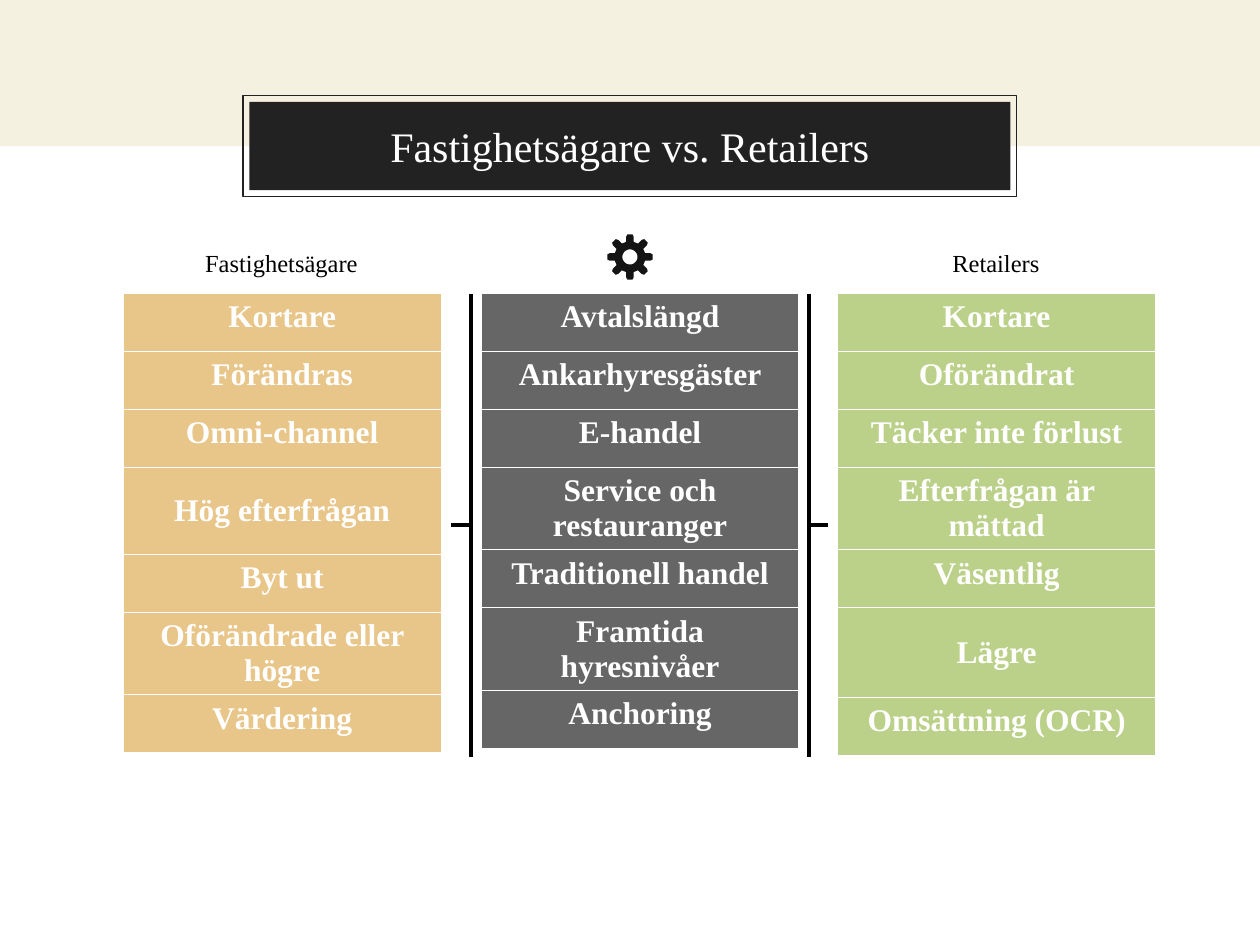
import math

import pptx
import pptx.dml.color
import pptx.enum.shapes
import pptx.enum.text
import pptx.oxml
import pptx.oxml.ns
import pptx.util
from pptx.util import Inches

RGBColor = pptx.dml.color.RGBColor
PP_ALIGN = pptx.enum.text.PP_ALIGN
ANCHOR = pptx.enum.text.MSO_ANCHOR

CREAM = RGBColor(0xF5, 0xF1, 0xE0)
CHARCOAL = RGBColor(0x22, 0x22, 0x22)
GEAR_BLACK = RGBColor(0x14, 0x14, 0x14)
BLACK = RGBColor(0, 0, 0)
WHITE = RGBColor(0xFF, 0xFF, 0xFF)
GREY = RGBColor(0x66, 0x66, 0x66)
SAND = RGBColor(0xE8, 0xC5, 0x88)
GREEN = RGBColor(0xBB, 0xD1, 0x89)

FONT = "Times New Roman"
TOP = 2.33
COLUMN_WIDTH = 2.52
ROW_HEIGHT = 0.46


class SlideBuilder:
    def __init__(self, slide):
        self.slide = slide
        self.shapes = slide.shapes

    def add_text(self, paragraph, text, size, color, bold=False):
        run = paragraph.add_run()
        run.text = text
        run.font.name = FONT
        run.font.size = pptx.util.Pt(size)
        run.font.bold = bold
        run.font.color.rgb = color

    def box(self, left, top, width, height, fill=None, line=None):
        box = self.shapes.add_shape(
            pptx.enum.shapes.MSO_SHAPE.RECTANGLE,
            Inches(left), Inches(top), Inches(width), Inches(height))
        box.shadow.inherit = False
        if fill is None:
            box.fill.background()
        else:
            box.fill.solid()
            box.fill.fore_color.rgb = fill
        if line is None:
            box.line.fill.background()
        else:
            box.line.color.rgb = line
            box.line.width = pptx.util.Pt(0.75)
        return box

    def title(self, text):
        self.box(1.93, 0.76, 6.14, 0.8, line=CHARCOAL)
        frame = self.box(1.98, 0.81, 6.04, 0.7, fill=CHARCOAL).text_frame
        frame.word_wrap = True
        frame.vertical_anchor = ANCHOR.MIDDLE
        frame.margin_left = frame.margin_right = Inches(0.1)
        frame.margin_top = frame.margin_bottom = Inches(0.1)
        frame.paragraphs[0].alignment = PP_ALIGN.CENTER
        self.add_text(frame.paragraphs[0], text, 24, WHITE)

    def heading(self, left, width, text):
        frame = self.shapes.add_textbox(
            Inches(left), Inches(1.92), Inches(width), Inches(0.34)).text_frame
        frame.word_wrap = False
        frame.auto_size = pptx.enum.text.MSO_AUTO_SIZE.SHAPE_TO_FIT_TEXT
        self.add_text(frame.paragraphs[0], text, 14, BLACK)

    def border(self, cell):
        properties = cell._tc.get_or_add_tcPr()
        for position, side in enumerate(("lnL", "lnR", "lnT", "lnB")):
            properties.insert(position, pptx.oxml.parse_xml(
                f'<a:{side} {pptx.oxml.ns.nsdecls("a")} w="7620"><a:solidFill>'
                f'<a:srgbClr val="{WHITE}"/></a:solidFill></a:{side}>'))

    def column(self, left, fill, topics, tall_rows):
        heights = [tall_rows.get(topic, ROW_HEIGHT) for topic in topics]
        table = self.shapes.add_table(
            len(topics), 1, Inches(left), Inches(TOP),
            Inches(COLUMN_WIDTH), Inches(sum(heights))).table
        table.first_row = table.horz_banding = False
        for row, topic, height in zip(table.rows, topics, heights):
            row.height = Inches(height)
            cell = row.cells[0]
            cell.fill.solid()
            cell.fill.fore_color.rgb = fill
            self.border(cell)
            if topic in tall_rows:
                cell.vertical_anchor = ANCHOR.MIDDLE
            paragraph = cell.text_frame.paragraphs[0]
            paragraph.alignment = PP_ALIGN.CENTER
            self.add_text(paragraph, topic, 18, WHITE, bold=True)

    def line(self, start_x, start_y, end_x, end_y):
        line = self.shapes.add_connector(
            pptx.enum.shapes.MSO_CONNECTOR.STRAIGHT,
            Inches(start_x), Inches(start_y), Inches(end_x), Inches(end_y))
        line.line.color.rgb = BLACK
        line.line.width = pptx.util.Pt(2.25)
        line._element.spPr.append(pptx.oxml.parse_xml(
            f'<a:effectLst {pptx.oxml.ns.nsdecls("a")}/>'))

    def gear(self, center_x, center_y, teeth=8, hole_radius=0.06):
        tooth = [(-0.03, 0.12), (-0.03, 0.16), (-0.02, 0.18),
                 (0.02, 0.18), (0.03, 0.16), (0.03, 0.12)]

        def turned(x, y, angle):
            return (Inches(center_x + x * math.cos(angle) + y * math.sin(angle)),
                    Inches(center_y + x * math.sin(angle) - y * math.cos(angle)))

        rim = [turned(x, y, math.tau * number / teeth)
               for number in range(teeth) for x, y in tooth]
        hole = [turned(0, hole_radius, -math.tau * step / 36) for step in range(36)]
        builder = self.shapes.build_freeform(*rim[0])
        builder.add_line_segments(rim[1:], close=True)
        builder.move_to(*hole[0])
        builder.add_line_segments(hole[1:], close=True)
        gear = builder.convert_to_shape()
        gear.shadow.inherit = False
        gear.fill.solid()
        gear.fill.fore_color.rgb = GEAR_BLACK
        gear.line.fill.background()


def main():
    presentation = pptx.Presentation()
    presentation.slide_width = Inches(10)
    presentation.slide_height = Inches(7.5)
    slide = SlideBuilder(presentation.slides.add_slide(presentation.slide_layouts[6]))

    slide.box(0, 0, 10, 1.16, fill=CREAM)
    slide.title("Fastighetsägare vs. Retailers")

    slide.column(3.82, GREY, [
        "Avtalslängd", "Ankarhyresgäster", "E-handel", "Service och restauranger",
        "Traditionell handel", "Framtida hyresnivåer", "Anchoring"], {})
    slide.column(0.98, SAND, [
        "Kortare", "Förändras", "Omni-channel", "Hög efterfrågan",
        "Byt ut", "Oförändrade eller högre", "Värdering"],
        {"Hög efterfrågan": 0.69})
    slide.column(6.65, GREEN, [
        "Kortare", "Oförändrat", "Täcker inte förlust", "Efterfrågan är mättad",
        "Väsentlig", "Lägre", "Omsättning (OCR)"],
        {"Lägre": 0.71})

    slide.heading(1.53, 1.43, "Fastighetsägare")
    slide.heading(7.46, 0.9, "Retailers")
    slide.gear(5, 2.04)

    bottom = 6.01
    middle = (TOP + bottom) / 2
    for divider, tick_end in ((3.74, 3.58), (6.42, 6.57)):
        slide.line(divider, TOP, divider, bottom)
        slide.line(divider, middle, tick_end, middle)

    presentation.save("out.pptx")


if __name__ == "__main__":
    main()
